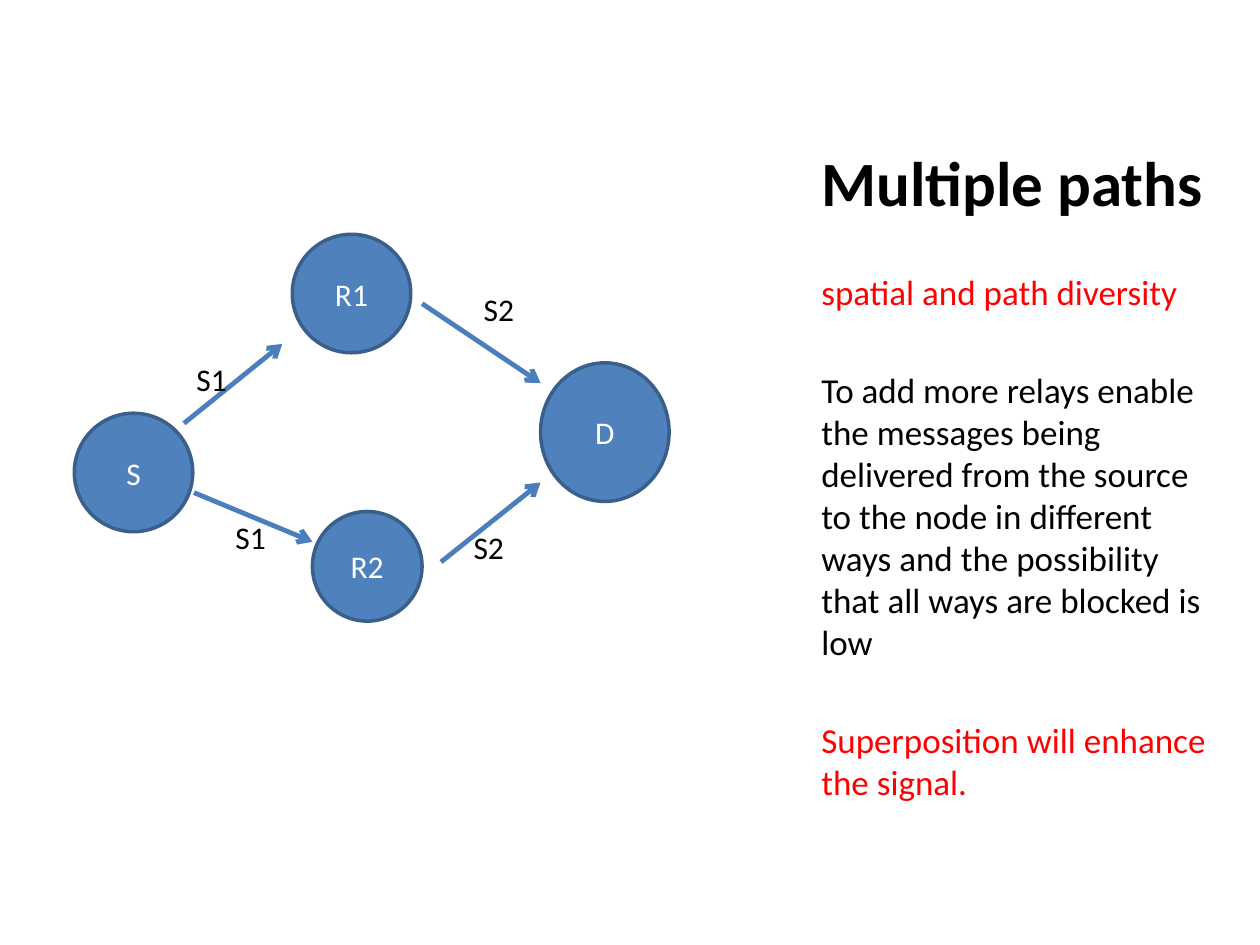
"""Build a slide on multiple relay paths between a source and a destination."""
from lxml import etree
from pptx import Presentation, util as u
from pptx.dml.color import RGBColor
from pptx.enum import shapes, text
from pptx.oxml.ns import qn

presentation = Presentation()
presentation.slide_width, presentation.slide_height = u.Inches(10), u.Inches(7.5)
slide = presentation.slides.add_slide(presentation.slide_layouts[6])
unit = presentation.slide_width / 100


def grid(*cells):
    return [round(cell * unit) for cell in cells]


def style(paragraph, size, color, bold=False):
    font = paragraph.font
    font.name, font.size, font.bold = "Calibri", u.Pt(size), bold
    font.color.rgb = RGBColor.from_string(color)


text_left, text_width = 64.2, 32.9
title = slide.shapes.add_textbox(*grid(text_left, 5.2, text_width, 12.7)).text_frame
title.word_wrap = True
title.vertical_anchor = text.MSO_ANCHOR.BOTTOM
title.text = "Multiple paths"
style(title.paragraphs[0], 36, "000000", bold=True)

body = slide.shapes.add_textbox(*grid(text_left, 21, text_width, 51.3)).text_frame
body.word_wrap = True
statements = [
    ("spatial and path diversity", "FF0000", 4),
    ("To add more relays enable the messages being delivered from the source "
     "to the node in different ways and the possibility that all ways are "
     "blocked is low", "000000", 32),
    ("Superposition will enhance the signal.", "FF0000", 32),
]
body.text = "\n".join(statement[0] for statement in statements)
for paragraph, (_, color, gap) in zip(body.paragraphs, statements):
    style(paragraph, 20, color)
    paragraph.space_before = u.Pt(gap)

nodes = [
    ("S", 5.9, 32.8, 9.4, 9.4),
    ("R1", 23.2, 18.6, 9.4, 9.4),
    ("R2", 24.8, 40.6, 8.7, 8.7),
    ("D", 42.9, 28.8, 10.2, 11),
]
for name, *box in nodes:
    node = slide.shapes.add_shape(shapes.MSO_SHAPE.OVAL, *grid(*box))
    node.shadow.inherit = False
    node.fill.solid()
    node.fill.fore_color.rgb = RGBColor.from_string("4F81BD")
    node.line.color.rgb = RGBColor.from_string("3A5F8C")
    node.line.width = u.Pt(2)
    node.text_frame.text = name
    node.text_frame.vertical_anchor = text.MSO_ANCHOR.MIDDLE
    paragraph = node.text_frame.paragraphs[0]
    paragraph.alignment = text.PP_ALIGN.CENTER
    style(paragraph, 18, "FFFFFF")

links = [
    ("S1", (14.6, 33.6, 22.4, 27.3), (14.6, 28.1)),
    ("S1", (15.4, 39.1, 24.8, 43), (17.7, 40.6)),
    ("S2", (33.5, 24.1, 42.9, 30.4), (37.4, 22.5)),
    ("S2", (35, 44.6, 42.9, 38.3), (36.6, 41.4)),
]
for signal, ends, corner in links:
    arrow = slide.shapes.add_connector(shapes.MSO_CONNECTOR.STRAIGHT, *grid(*ends))
    arrow.line.color.rgb = RGBColor.from_string("4B7EBC")
    arrow.line.width = u.Pt(2.75)
    etree.SubElement(arrow.line._get_or_add_ln(), qn("a:tailEnd"), type="arrow")
    etree.SubElement(arrow._element.spPr, qn("a:effectLst"))

    label = slide.shapes.add_textbox(*grid(*corner, 4.5, 4)).text_frame
    label.word_wrap = False
    label.auto_size = text.MSO_AUTO_SIZE.SHAPE_TO_FIT_TEXT
    label.text = signal
    style(label.paragraphs[0], 18, "000000")

presentation.save("out.pptx")
